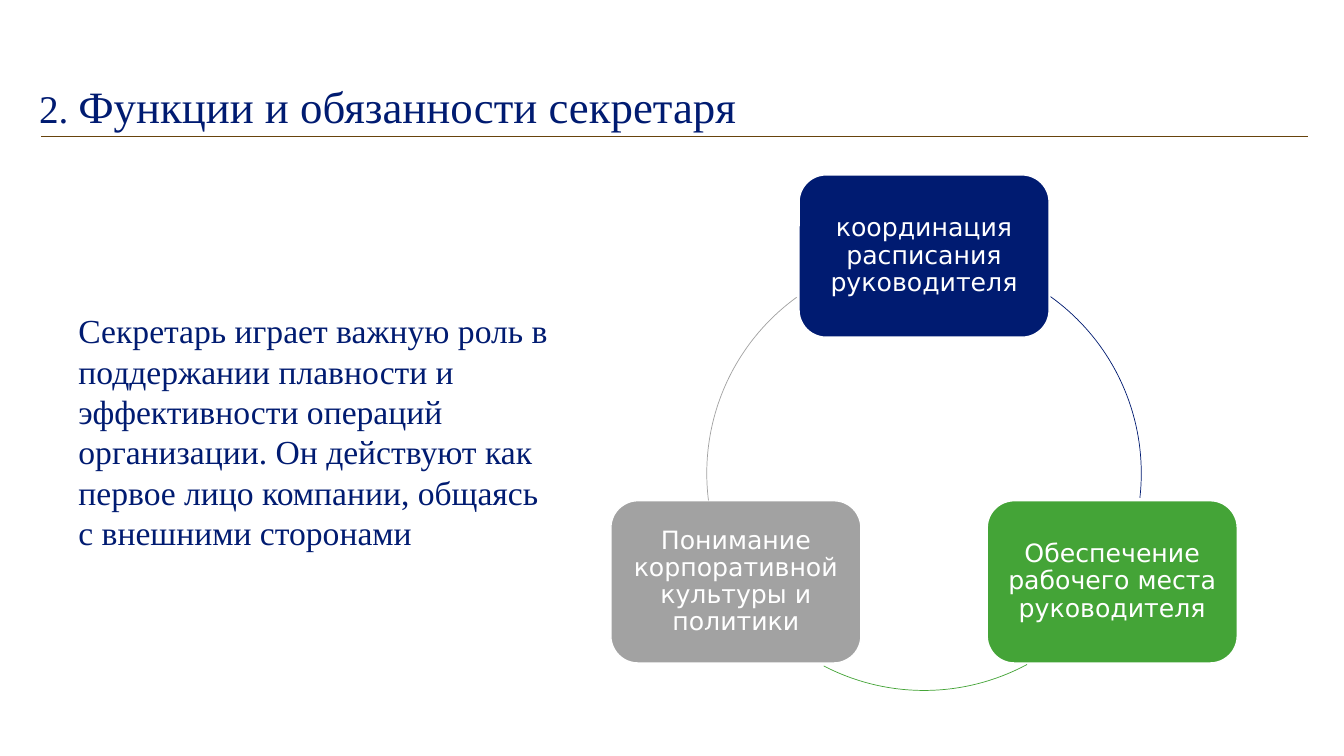
from math import cos, radians, sin

from lxml.etree import SubElement
from pptx import Presentation
from pptx.dml.color import RGBColor
from pptx.enum.shapes import MSO_CONNECTOR, MSO_SHAPE
from pptx.enum.text import MSO_ANCHOR as ANCHOR, PP_ALIGN as ALIGN
from pptx.oxml.ns import qn
from pptx.util import Pt

PX = 9144
COLORS = {"navy": "001B71", "green": "44A437", "gray": "A2A2A2",
          "white": "FFFFFF", "rule": "67430C"}
SERIF, SANS = "Times New Roman", "DejaVu Sans"
CARD_W, CARD_H = 248, 161
DUTIES = [
    ("координация расписания руководителя", "navy", 305.6, 6.5),
    ("Обеспечение рабочего места руководителя", "green", 61.7, 117.5),
    ("Понимание корпоративной культуры и политики", "gray", 172.8, 234.1),
]


def rgb(name):
    return RGBColor.from_string(COLORS[name])


def px(*lengths):
    return [round(n * PX) for n in lengths]


def add_run(p, text, font, size, color):
    r = p.add_run()
    r.text = text
    r.font.name, r.font.size = font, Pt(size)
    r.font.color.rgb = rgb(color)


def set_line(line, color, width):
    line.color.rgb = rgb(color)
    line.width = Pt(width)


def add_title(s, x, y, w, h):
    tf = s.shapes.add_textbox(*px(x, y, w, h)).text_frame
    tf.word_wrap = True
    tf.vertical_anchor = ANCHOR.MIDDLE
    p = tf.paragraphs[0]
    p.line_spacing = 0.9
    add_run(p, "2. ", SERIF, 28, "navy")
    add_run(p, "Функции и обязанности секретаря", SERIF, 32, "navy")
    rule_y = y + 92
    rule = s.shapes.add_connector(MSO_CONNECTOR.STRAIGHT,
                                  *px(x + 12, rule_y, x + 1268, rule_y))
    set_line(rule.line, "rule", 0.5)
    SubElement(rule._element.spPr, qn("a:effectLst"))


def add_intro(s, x, y, w, h):
    tf = s.shapes.add_textbox(*px(x, y, w, h)).text_frame
    tf.word_wrap = True
    add_run(tf.paragraphs[0],
            "Секретарь играет важную роль в поддержании плавности и "
            "эффективности операций организации. Он действуют как первое "
            "лицо компании, общаясь с внешними сторонами", SERIF, 24, "navy")


def add_card(s, cx, cy, text, color):
    sp = s.shapes.add_shape(MSO_SHAPE.ROUNDED_RECTANGLE,
                            *px(cx - CARD_W / 2, cy - CARD_H / 2, CARD_W, CARD_H))
    sp.shadow.inherit = False
    sp.fill.solid()
    sp.fill.fore_color.rgb = rgb(color)
    set_line(sp.line, "white", 1)
    tf = sp.text_frame
    tf.word_wrap = True
    tf.vertical_anchor = ANCHOR.MIDDLE
    tf.margin_left = tf.margin_right = tf.margin_top = tf.margin_bottom = 10 * PX
    p = tf.paragraphs[0]
    p.alignment = ALIGN.CENTER
    p.line_spacing = 0.9
    add_run(p, text, SANS, 18, "white")


def add_arc(s, x, y, size, start, end, color):
    arc = s.shapes.add_shape(MSO_SHAPE.ARC, *px(x, y, size, size))
    arc.shadow.inherit = False
    arc.fill.background()
    set_line(arc.line, color, 0.5)
    for i, degrees in enumerate((start, end)):
        arc.adjustments[i] = degrees * 0.6


def add_cycle(s, x, y, size):
    radius = size / 2
    for i, (text, color, start, end) in enumerate(DUTIES):
        angle = radians(360 / len(DUTIES) * i - 90)
        add_card(s, x + radius + radius * cos(angle),
                 y + radius + radius * sin(angle), text, color)
        add_arc(s, x, y, size, start, end, color)


def main():
    prs = Presentation()
    prs.slide_width, prs.slide_height = px(1333, 750)
    s = prs.slides.add_slide(prs.slide_layouts[6])
    add_title(s, 29, 43, 1005, 131)
    add_cycle(s, 701, 254, 431)
    add_intro(s, 68, 303, 487, 252)
    prs.save("out.pptx")


if __name__ == "__main__":
    main()
